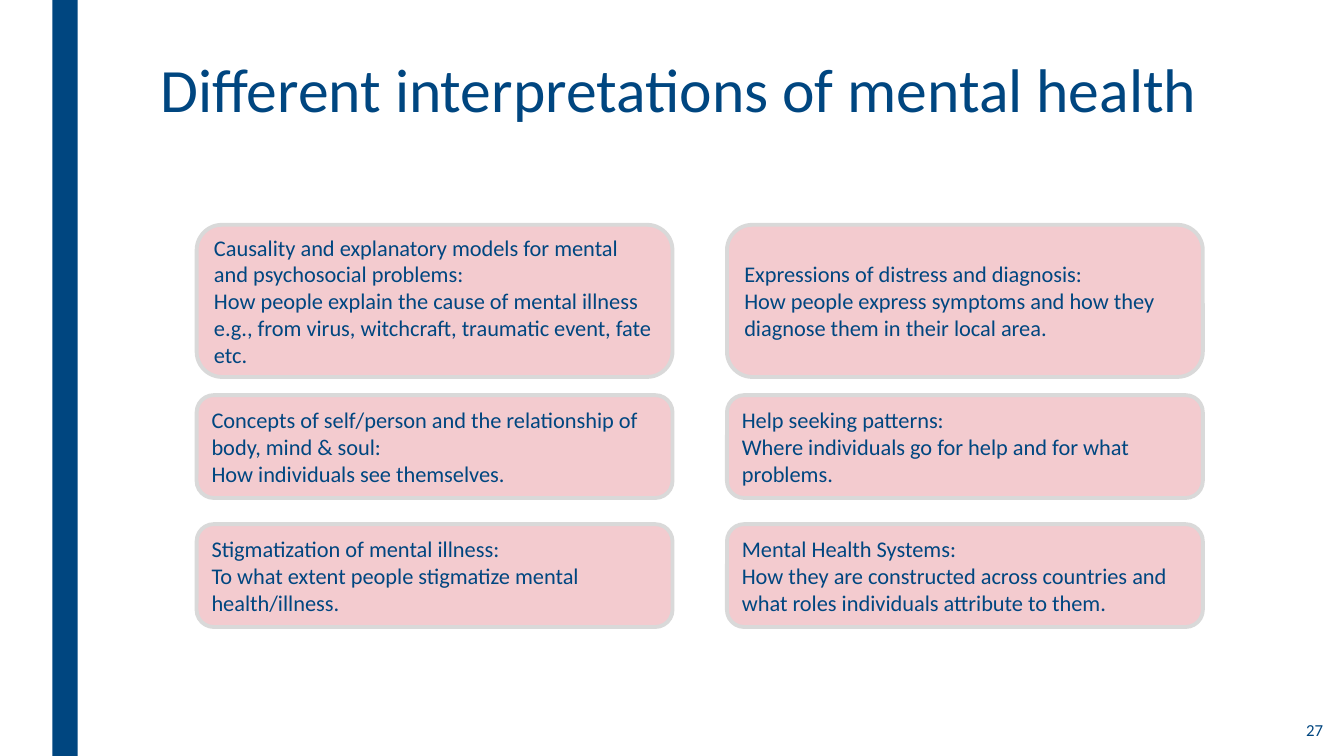
import pptx
import pptx.dml.color
import pptx.enum.shapes
import pptx.enum.text
import pptx.util

SLIDE_WIDTH, SLIDE_HEIGHT = 13.33, 7.5
COLOURS = {"navy": "004680", "pink": "F3CBCF", "grey": "D9D9D9", "white": "FFFFFF"}
FONT = "Calibri"

# Card grid: two equal columns, rows given as (top, height) from the grid's top
COLUMN_WIDTH, COLUMN_STEP = 4.72, 5.26
ROWS = [(0, 1.51), (1.69, 1.02), (2.97, 1.02)]
INTERPRETATIONS = [
    [
        ("Causality and explanatory models for mental and psychosocial problems:",
         "How people explain the cause of mental illness e.g., from virus, "
         "witchcraft, traumatic event, fate etc."),
        ("Expressions of distress and diagnosis:",
         "How people express symptoms and how they diagnose them in their local area."),
    ],
    [
        ("Concepts of self/person and the relationship of body, mind & soul:",
         "How individuals see themselves."),
        ("Help seeking patterns:",
         "Where individuals go for help and for what problems."),
    ],
    [
        ("Stigmatization of mental illness:",
         "To what extent people stigmatize mental health/illness."),
        ("Mental Health Systems:",
         "How they are constructed across countries and what roles individuals "
         "attribute to them."),
    ],
]


def colour(name):
    return pptx.dml.color.RGBColor.from_string(COLOURS[name])


def inches(box):
    return [pptx.util.Inches(length) for length in box]


def write(frame, lines, size, align=pptx.enum.text.PP_ALIGN.LEFT):
    frame.word_wrap = True
    frame.text = "\n".join(lines)
    for paragraph in frame.paragraphs:
        paragraph.alignment = align
        paragraph.font.name = FONT
        paragraph.font.size = pptx.util.Pt(size)
        paragraph.font.color.rgb = colour("navy")


def add_filled(slide, preset, box, fill):
    shape = slide.shapes.add_shape(preset, *inches(box))
    shape.shadow.inherit = False
    shape.fill.solid()
    shape.fill.fore_color.rgb = colour(fill)
    return shape


def add_side_bar(slide, box):
    bar = add_filled(slide, pptx.enum.shapes.MSO_SHAPE.RECTANGLE, box, "navy")
    bar.line.fill.background()


def add_title(slide, box, title):
    frame = slide.shapes.add_textbox(*inches(box)).text_frame
    frame.margin_left = frame.margin_right = pptx.util.Inches(0.04)
    frame.margin_top = pptx.util.Inches(0.07)
    write(frame, [title], 44)
    frame.paragraphs[0].line_spacing = 0.89


def add_page_number(slide, box, number):
    frame = slide.shapes.add_textbox(*inches(box)).text_frame
    frame.vertical_anchor = pptx.enum.text.MSO_ANCHOR.MIDDLE
    write(frame, [str(number)], 12, pptx.enum.text.PP_ALIGN.RIGHT)


def add_card(slide, box, lines):
    card = add_filled(slide, pptx.enum.shapes.MSO_SHAPE.ROUNDED_RECTANGLE, box, "pink")
    card.line.color.rgb = colour("grey")
    card.line.width = pptx.util.Pt(2.75)
    card.text_frame.vertical_anchor = pptx.enum.text.MSO_ANCHOR.MIDDLE
    write(card.text_frame, lines, 16)


def add_card_grid(slide, left, top):
    for (row_top, height), row in zip(ROWS, INTERPRETATIONS):
        for column, lines in enumerate(row):
            box = (left + column * COLUMN_STEP, top + row_top, COLUMN_WIDTH, height)
            add_card(slide, box, lines)


def main():
    deck = pptx.Presentation()
    deck.slide_width, deck.slide_height = inches((SLIDE_WIDTH, SLIDE_HEIGHT))
    slide = deck.slides.add_slide(deck.slide_layouts[6])
    slide.background.fill.solid()
    slide.background.fill.fore_color.rgb = colour("white")

    # Frame of the slide
    add_side_bar(slide, (0.52, 0, 0.25, SLIDE_HEIGHT))
    add_page_number(slide, (11.47, 7.02, 1.75, 0.44), 27)

    # Content
    add_title(slide, (1.55, 0.52, 10.87, 1.62), "Different interpretations of mental health")
    add_card_grid(slide, 1.95, 2.23)

    deck.save("out.pptx")


if __name__ == "__main__":
    main()
